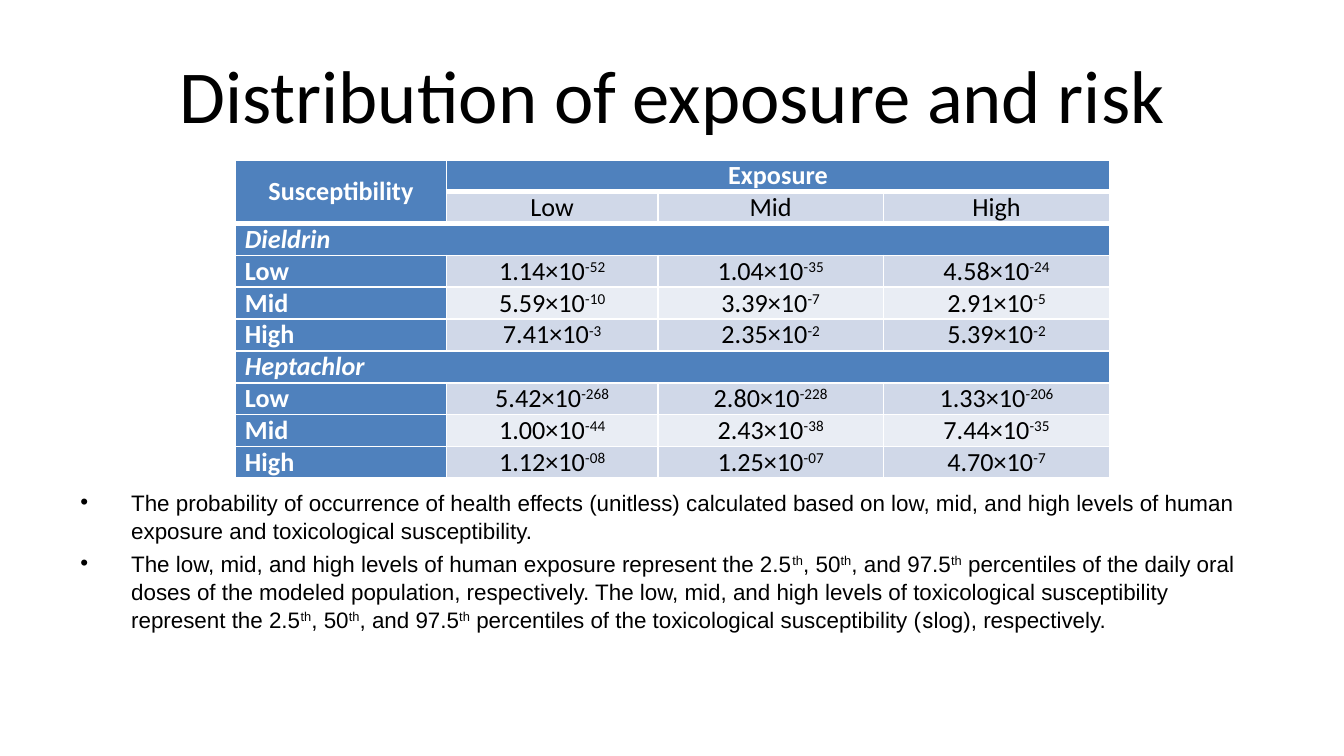
from dataclasses import dataclass

from lxml.etree import SubElement
from pptx import Presentation
from pptx.dml.color import RGBColor as Color
from pptx.enum.text import MSO_ANCHOR as Anchor, PP_ALIGN as Align
from pptx.oxml.ns import qn
from pptx.util import Cm, Pt


@dataclass(frozen=True)
class Theme:
    black: str = "000000"
    white: str = "FFFFFF"
    header: str = "4F81BD"
    band_dark: str = "D0D8E8"
    band_light: str = "E9EDF4"
    title_size: int = 40
    table_size: int = 14
    note_size: int = 12
    heading_font: str = "Calibri"
    note_font: str = "Arial"
    accent_font: str = "Roboto"


THEME = Theme()
COLUMN_WIDTHS = (3.99, 3.99, 4.27, 4.27)
LEVELS = ("Low", "Mid", "High")
RISKS = {
    "Dieldrin": (
        ("1.14×10^-52", "1.04×10^-35", "4.58×10^-24"),
        ("5.59×10^-10", "3.39×10^-7", "2.91×10^-5"),
        ("7.41×10^-3", "2.35×10^-2", "5.39×10^-2"),
    ),
    "Heptachlor": (
        ("5.42×10^-268", "2.80×10^-228", "1.33×10^-206"),
        ("1.00×10^-44", "2.43×10^-38", "7.44×10^-35"),
        ("1.12×10^-08", "1.25×10^-07", "4.70×10^-7"),
    ),
}
PERCENTILES = "2.5^th^, 50^th^, and 97.5^th^ percentiles of the "
NOTES = (
    (("The probability of occurrence of health effects (unitless) calculated based on "
      "low, mid, and high levels of human exposure and toxicological susceptibility.",
      THEME.note_font),),
    (("The low, mid, and high levels of human exposure represent the " + PERCENTILES
      + "daily oral doses of the modeled population, respectively. The low, mid, and high "
      "levels of toxicological susceptibility represent the " + PERCENTILES
      + "toxicological susceptibility (", THEME.note_font),
     ("s", THEME.accent_font),
     ("log), respectively.", THEME.note_font)),
)


def write_text(paragraph, text, *, size, font=THEME.heading_font, color=THEME.black,
               bold=False, italic=False, align=Align.LEFT):
    paragraph.alignment = align
    for index, part in enumerate(text.split("^")):
        if not part:
            continue
        run = paragraph.add_run()
        run.text = part
        run.font.size = Pt(size)
        run.font.name = font
        run.font.bold = bold
        run.font.italic = italic
        run.font.color.rgb = Color.from_string(color)
        if index % 2:
            run.font._element.set("baseline", "30000")


def add_title(slide, text):
    title = slide.shapes.title
    title.left, title.top, title.width, title.height = Cm(1.27), Cm(0.58), Cm(22.86), Cm(2.39)
    title.text_frame.vertical_anchor = Anchor.MIDDLE
    write_text(title.text_frame.paragraphs[0], text, size=THEME.title_size, align=Align.CENTER)


def set_borders(cell, top, bottom):
    properties = cell._tc.get_or_add_tcPr()
    for side, width in (("lnL", 1), ("lnR", 1), ("lnT", top), ("lnB", bottom)):
        line = SubElement(properties, qn(f"a:{side}"), w=str(Pt(width)))
        fill = SubElement(line, qn("a:solidFill"))
        SubElement(fill, qn("a:srgbClr"), val=THEME.white)


def fill_cell(cell, text, fill, anchor=Anchor.BOTTOM, **text_format):
    cell.fill.solid()
    cell.fill.fore_color.rgb = Color.from_string(fill)
    cell.vertical_anchor = anchor
    cell.margin_left = cell.margin_right = Cm(0.18)
    cell.margin_top = cell.margin_bottom = 0
    write_text(cell.text_frame.paragraphs[0], text, size=THEME.table_size, **text_format)


def add_risk_table(slide):
    row_count = 2 + sum(1 + len(rows) for rows in RISKS.values())
    table = slide.shapes.add_table(row_count, len(COLUMN_WIDTHS), Cm(4.45), Cm(3.02),
                                   Cm(sum(COLUMN_WIDTHS)), Cm(0.51 * row_count)).table
    for column, width in zip(table.columns, COLUMN_WIDTHS):
        column.width = Cm(width)
    for index, row in enumerate(table.rows):
        row.height = Cm(0.51)
        for cell in row.cells:
            set_borders(cell, top=3 if index in (1, 2) else 1, bottom=3 if index < 2 else 1)

    heading = {"fill": THEME.header, "color": THEME.white, "bold": True}
    table.cell(0, 0).merge(table.cell(1, 0))
    table.cell(0, 1).merge(table.cell(0, 3))
    fill_cell(table.cell(0, 0), "Susceptibility", anchor=Anchor.MIDDLE,
              align=Align.CENTER, **heading)
    fill_cell(table.cell(0, 1), "Exposure", align=Align.CENTER, **heading)
    for column, level in enumerate(LEVELS, 1):
        fill_cell(table.cell(1, column), level, THEME.band_dark, align=Align.CENTER)

    row = 2
    for chemical, risks in RISKS.items():
        table.cell(row, 0).merge(table.cell(row, 3))
        fill_cell(table.cell(row, 0), chemical, italic=True, **heading)
        for index, (level, values) in enumerate(zip(LEVELS, risks)):
            row += 1
            fill_cell(table.cell(row, 0), level, **heading)
            band = THEME.band_light if index % 2 else THEME.band_dark
            for column, value in enumerate(values, 1):
                fill_cell(table.cell(row, column), value, band, align=Align.CENTER)
        row += 1


def add_bullet(paragraph):
    properties = paragraph._p.get_or_add_pPr()
    properties.set("marL", str(Cm(0.96)))
    properties.set("indent", str(-Cm(0.96)))
    SubElement(properties, qn("a:buFont"), typeface=THEME.note_font)
    SubElement(properties, qn("a:buChar"), char="•")


def add_notes(slide):
    frame = slide.shapes.add_textbox(Cm(1.27), Cm(9.09), Cm(22.86), Cm(3.56)).text_frame
    frame.word_wrap = True
    for index, pieces in enumerate(NOTES):
        paragraph = frame.add_paragraph() if index else frame.paragraphs[0]
        add_bullet(paragraph)
        paragraph.line_spacing = 1.05
        if index:
            paragraph.space_before = Pt(2.4)
        for text, font in pieces:
            write_text(paragraph, text, size=THEME.note_size, font=font)


def main():
    presentation = Presentation()
    presentation.slide_width, presentation.slide_height = Cm(25.4), Cm(14.29)
    slide = presentation.slides.add_slide(presentation.slide_layouts[5])
    add_title(slide, "Distribution of exposure and risk")
    add_risk_table(slide)
    add_notes(slide)
    presentation.save("out.pptx")


if __name__ == "__main__":
    main()
